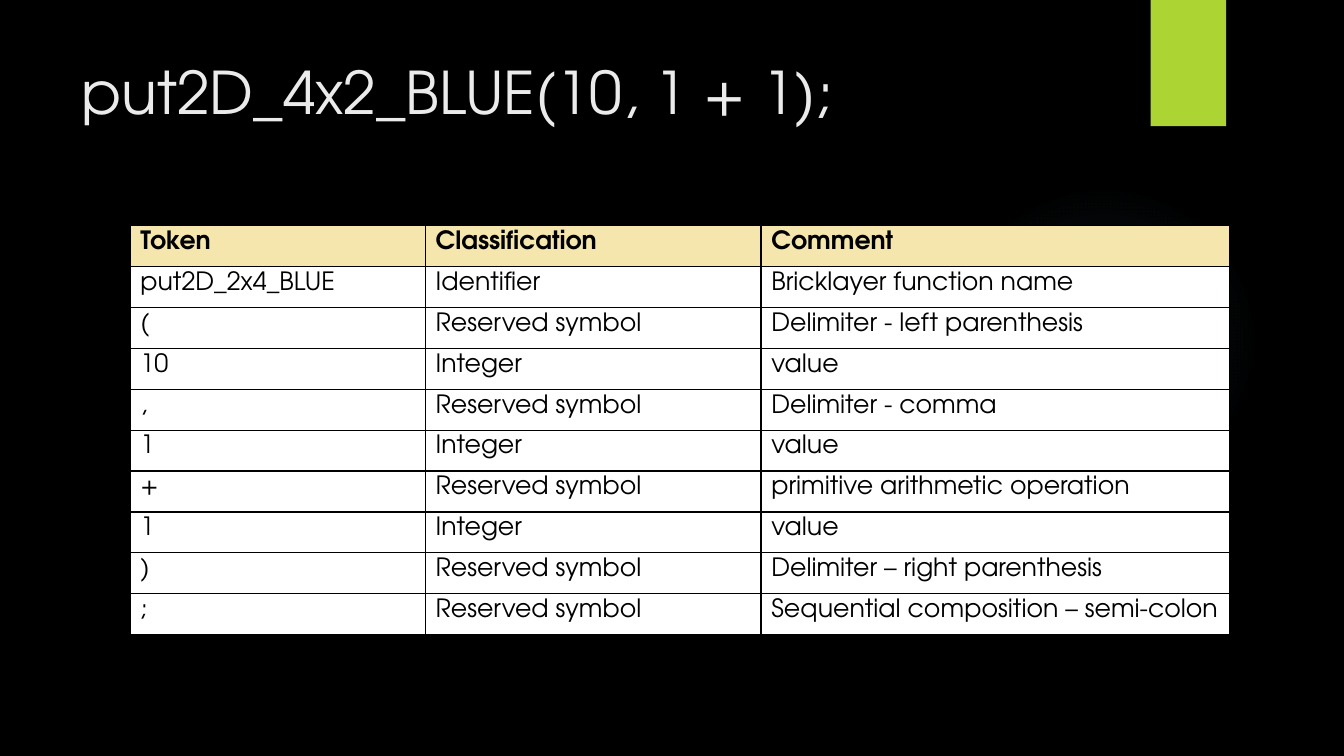
from lxml import etree
from pptx import Presentation
from pptx.dml.color import RGBColor
from pptx.enum.shapes import MSO_SHAPE as Preset
from pptx.enum.text import MSO_ANCHOR as Anchor, MSO_AUTO_SIZE as AutoSize, PP_ALIGN as Align
from pptx.oxml import parse_xml
from pptx.util import Cm, Pt

DRAWING = "http://schemas.openxmlformats.org/drawingml/2006/main"
FONT = "TeX Gyre Adventor"


def color(value):
    return RGBColor.from_string(value)


def write(frame, text, size, ink, bold=False):
    para = frame.paragraphs[0]
    para.alignment = Align.LEFT
    span = para.add_run()
    span.text = text
    for name, value in {"name": FONT, "size": Pt(size), "bold": bold}.items():
        setattr(span.font, name, value)
    span.font.color.rgb = color(ink)


deck = Presentation()
deck.slide_width = Cm(33.87)
deck.slide_height = Cm(19.05)
page = deck.slides.add_slide(deck.slide_layouts[5])
page.background.fill.solid()
page.background.fill.fore_color.rgb = color("000000")

glow = page.shapes.add_shape(Preset.OVAL, Cm(23.9), Cm(4.65), Cm(7.82), Cm(7.82))
glow.shadow.inherit = False
glow.line.fill.background()
glow.fill.gradient()
stops = "".join(
    f'<a:gs pos="{place * 1000}"><a:srgbClr val="7AC4F0"><a:alpha val="{alpha * 1000}"/></a:srgbClr></a:gs>'
    for place, alpha in [(0, 7), (36, 6), (69, 0), (100, 0)]
)
gradient = parse_xml(
    f'<a:gradFill xmlns:a="{DRAWING}" rotWithShape="1"><a:gsLst>{stops}</a:gsLst>'
    '<a:path path="circle"><a:fillToRect l="50000" t="50000" r="50000" b="50000"/></a:path></a:gradFill>'
)
plain = glow.element.spPr.find(f"{{{DRAWING}}}gradFill")
plain.getparent().replace(plain, gradient)

tab = page.shapes.add_shape(Preset.RECTANGLE, Cm(29), Cm(0), Cm(1.9), Cm(3.18))
tab.shadow.inherit = False
tab.line.fill.background()
tab.fill.solid()
tab.fill.fore_color.rgb = color("ACD433")

title = page.shapes.title
title_place = {"left": Cm(1.8), "top": Cm(1.27), "width": Cm(26.14), "height": Cm(3.89)}
for name, value in title_place.items():
    setattr(title, name, value)
title_format = {"word_wrap": True, "auto_size": AutoSize.NONE, "vertical_anchor": Anchor.TOP}
for name, value in title_format.items():
    setattr(title.text_frame, name, value)
write(title.text_frame, "put2D_4x2_BLUE(10, 1 + 1);", 42, "EBEBEB")

tokens = [
    ("Token", "Classification", "Comment"),
    ("put2D_2x4_BLUE", "Identifier", "Bricklayer function name"),
    ("(", "Reserved symbol", "Delimiter - left parenthesis"),
    ("10", "Integer", "value"),
    (",", "Reserved symbol", "Delimiter - comma"),
    ("1", "Integer", "value"),
    ("+", "Reserved symbol", "primitive arithmetic operation"),
    ("1", "Integer", "value"),
    (")", "Reserved symbol", "Delimiter – right parenthesis"),
    (";", "Reserved symbol", "Sequential composition – semi-colon"),
]
widths = [7.44, 8.46, 11.81]
row_height = 1.03
table = page.shapes.add_table(
    len(tokens), len(widths), Cm(3.28), Cm(5.69), Cm(sum(widths)), Cm(row_height * len(tokens))
).table
for column, width in zip(table.columns, widths):
    column.width = Cm(width)

cell_format = {
    "margin_left": Cm(0.26),
    "margin_right": Cm(0.2),
    "margin_top": Cm(0.13),
    "margin_bottom": Cm(0),
    "vertical_anchor": Anchor.TOP,
}
for row_index, texts in enumerate(tokens):
    table.rows[row_index].height = Cm(row_height)
    is_header = row_index == 0
    for column_index, text in enumerate(texts):
        cell = table.cell(row_index, column_index)
        for name, value in cell_format.items():
            setattr(cell, name, value)
        properties = cell._tc.get_or_add_tcPr()
        for side in ("lnL", "lnR", "lnT", "lnB"):
            border = etree.SubElement(properties, f"{{{DRAWING}}}{side}", w=str(Pt(1)))
            paint = etree.SubElement(border, f"{{{DRAWING}}}solidFill")
            etree.SubElement(paint, f"{{{DRAWING}}}srgbClr", val="000000")
        cell.fill.solid()
        cell.fill.fore_color.rgb = color("F5E6AD" if is_header else "FFFFFF")
        write(cell.text_frame, text, 18, "000000", is_header)

deck.save("out.pptx")
